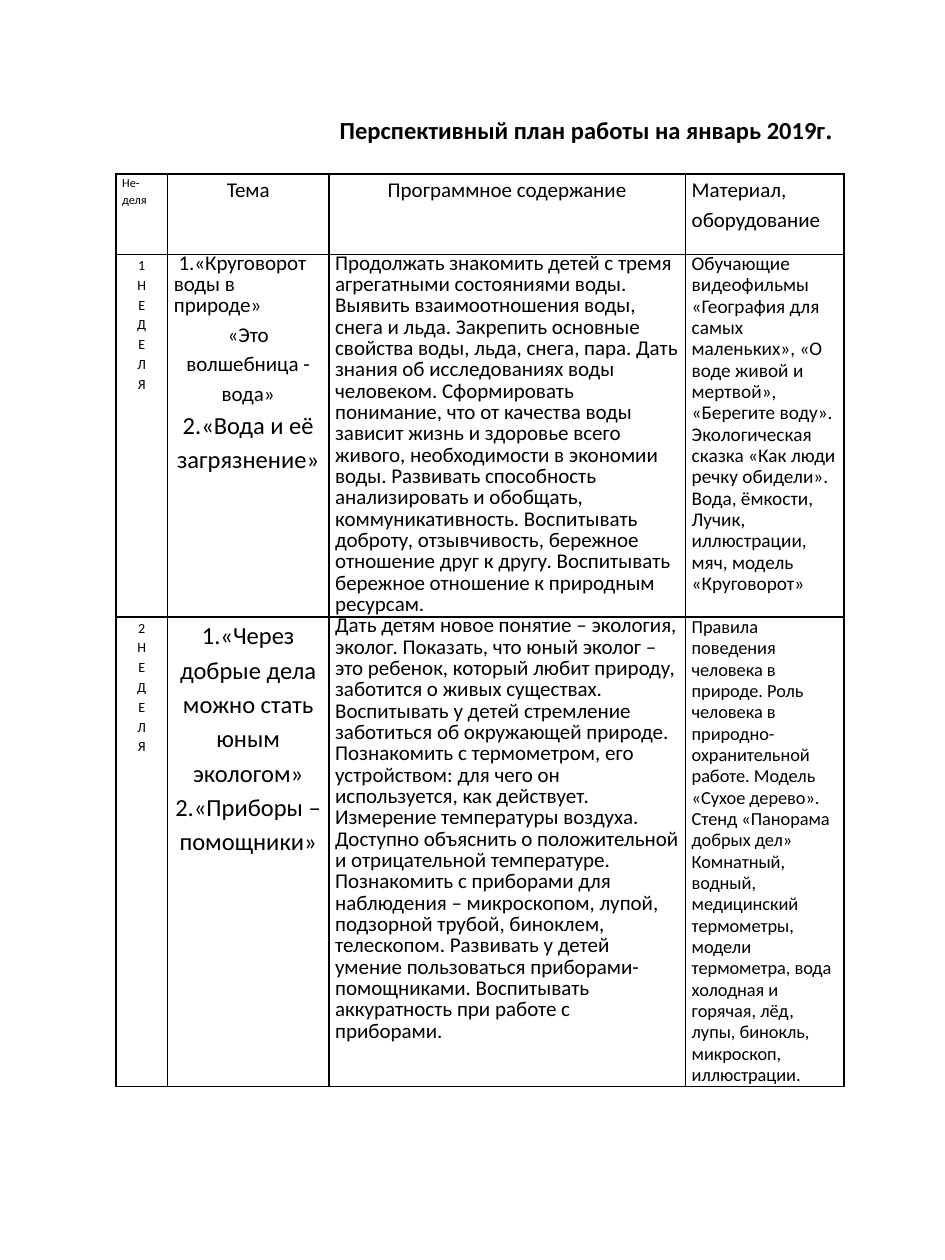
"""Build the January 2019 work plan slide with its weekly table."""
from lxml import etree
from pptx import Presentation
from pptx.dml.color import RGBColor
from pptx.enum.text import MSO_ANCHOR, MSO_AUTO_SIZE, PP_ALIGN
from pptx.oxml.ns import qn
from pptx.util import Inches, Pt

LEFT, CENTER = PP_ALIGN.LEFT, PP_ALIGN.CENTER
TOP, NO_FIT = MSO_ANCHOR.TOP, MSO_AUTO_SIZE.NONE
COLORS = {"text": "000000", "line": "000000", "fill": "FFFFFF"}
FONT = "Calibri"
LOOSE, TIGHT = 1.15, Pt(12.2)


def style(p, size, align, bold=False):
    p.alignment = align
    p.font.name = FONT
    p.font.size = Pt(size)
    p.font.bold = bold
    p.font.color.rgb = RGBColor.from_string(COLORS["text"])


def add_borders(cell, width):
    tcPr = cell._tc.get_or_add_tcPr()
    for side in ("lnL", "lnR", "lnT", "lnB"):
        ln = etree.SubElement(tcPr, qn(f"a:{side}"), w=str(Pt(width)))
        fill = etree.SubElement(ln, qn("a:solidFill"))
        etree.SubElement(fill, qn("a:srgbClr"), val=COLORS["line"])


def_rows = [
    [
        [("Не-деля", 7, LEFT, LOOSE)],
        [("Тема", 12, CENTER, LOOSE)],
        [("Программное содержание", 12, CENTER, LOOSE)],
        [("Материал, оборудование", 12, LEFT, LOOSE)],
    ],
    [
        [(c, 8, CENTER, LOOSE) for c in "1НЕДЕЛЯ"],
        [
            (" 1.«Круговорот воды в природе»", 12, LEFT, TIGHT),
            ("«Это волшебница - вода»", 12, CENTER, LOOSE),
            ("2.«Вода и её загрязнение»", 14, CENTER, LOOSE),
        ],
        [(
            "Продолжать знакомить детей с тремя агрегатными состояниями воды. "
            "Выявить взаимоотношения воды, снега и льда. Закрепить основные "
            "свойства воды, льда, снега, пара. Дать знания об исследованиях воды "
            "человеком. Сформировать понимание, что от качества воды зависит "
            "жизнь и здоровье всего живого, необходимости в экономии воды. "
            "Развивать способность анализировать и обобщать, коммуникативность. "
            "Воспитывать доброту, отзывчивость, бережное отношение друг к другу. "
            "Воспитывать бережное отношение к природным ресурсам.",
            12, LEFT, TIGHT,
        )],
        [(
            "Обучающие видеофильмы «География для самых маленьких», «О воде живой "
            "и мертвой», «Берегите воду». Экологическая сказка «Как люди речку "
            "обидели». Вода, ёмкости, Лучик, иллюстрации, мяч, модель «Круговорот»",
            11, LEFT, TIGHT,
        )],
    ],
    [
        [(c, 8, CENTER, LOOSE) for c in "2НЕДЕЛЯ"],
        [
            ("1.«Через добрые дела можно стать юным экологом»", 14, CENTER, LOOSE),
            ("2.«Приборы – помощники»", 14, CENTER, LOOSE),
        ],
        [
            (
                "Дать детям новое понятие – экология, эколог. Показать, что юный "
                "эколог – это ребенок, который любит природу, заботится о живых "
                "существах. Воспитывать у детей стремление заботиться об "
                "окружающей природе.",
                12, LEFT, TIGHT,
            ),
            (
                "Познакомить с термометром, его устройством: для чего он "
                "используется, как действует. Измерение температуры воздуха. "
                "Доступно объяснить о положительной и отрицательной температуре. "
                "Познакомить с приборами для наблюдения – микроскопом, лупой, "
                "подзорной трубой, биноклем, телескопом. Развивать у детей умение "
                "пользоваться приборами-помощниками. Воспитывать аккуратность при "
                "работе с приборами.",
                12, LEFT, TIGHT,
            ),
        ],
        [
            (
                "Правила поведения человека в природе. Роль человека в "
                "природно-охранительной работе. Модель «Сухое дерево». Стенд "
                "«Панорама добрых дел»",
                10.5, LEFT, TIGHT,
            ),
            (
                "Комнатный, водный, медицинский термометры, модели термометра, "
                "вода холодная и горячая, лёд, лупы, бинокль, микроскоп, "
                "иллюстрации.",
                10.5, LEFT, TIGHT,
            ),
        ],
    ],
]

prs = Presentation()
prs.slide_width, prs.slide_height = Inches(7.5), Inches(10)
s = prs.slides.add_slide(prs.slide_layouts[5])

title = s.shapes.title
title.left, title.top = Inches(1.25), Inches(0.86)
title.width, title.height = Inches(6.8), Inches(0.64)
tf = title.text_frame
tf.auto_size = NO_FIT
tf.vertical_anchor = TOP
p = tf.paragraphs[0]
style(p, 14, CENTER, bold=True)
for text, font in (
    ("Перспективный план работы на январь 2019г", FONT),
    (".", "Times New Roman"),
):
    r = p.add_run()
    r.text = text
    r.font.name = font

widths = [0.41, 1.28, 2.83, 1.26]
heights = [0.64, 2.3, 3.07]
table = s.shapes.add_table(
    len(heights), len(widths),
    Inches(0.92), Inches(1.38), Inches(sum(widths)), Inches(sum(heights)),
).table
table.first_row = table.horz_banding = False
for column, width in zip(table.columns, widths):
    column.width = Inches(width)

for row, height, contents in zip(table.rows, heights, def_rows):
    row.height = Inches(height)
    for cell, paragraphs in zip(row.cells, contents):
        add_borders(cell, 1)
        cell.fill.solid()
        cell.fill.fore_color.rgb = RGBColor.from_string(COLORS["fill"])
        cell.margin_left = cell.margin_right = Inches(0.05)
        cell.margin_top = cell.margin_bottom = 0
        tf = cell.text_frame
        for i, (text, size, align, spacing) in enumerate(paragraphs):
            p = tf.add_paragraph() if i else tf.paragraphs[0]
            p.text = text
            p.line_spacing = spacing
            style(p, size, align)

prs.save("out.pptx")
